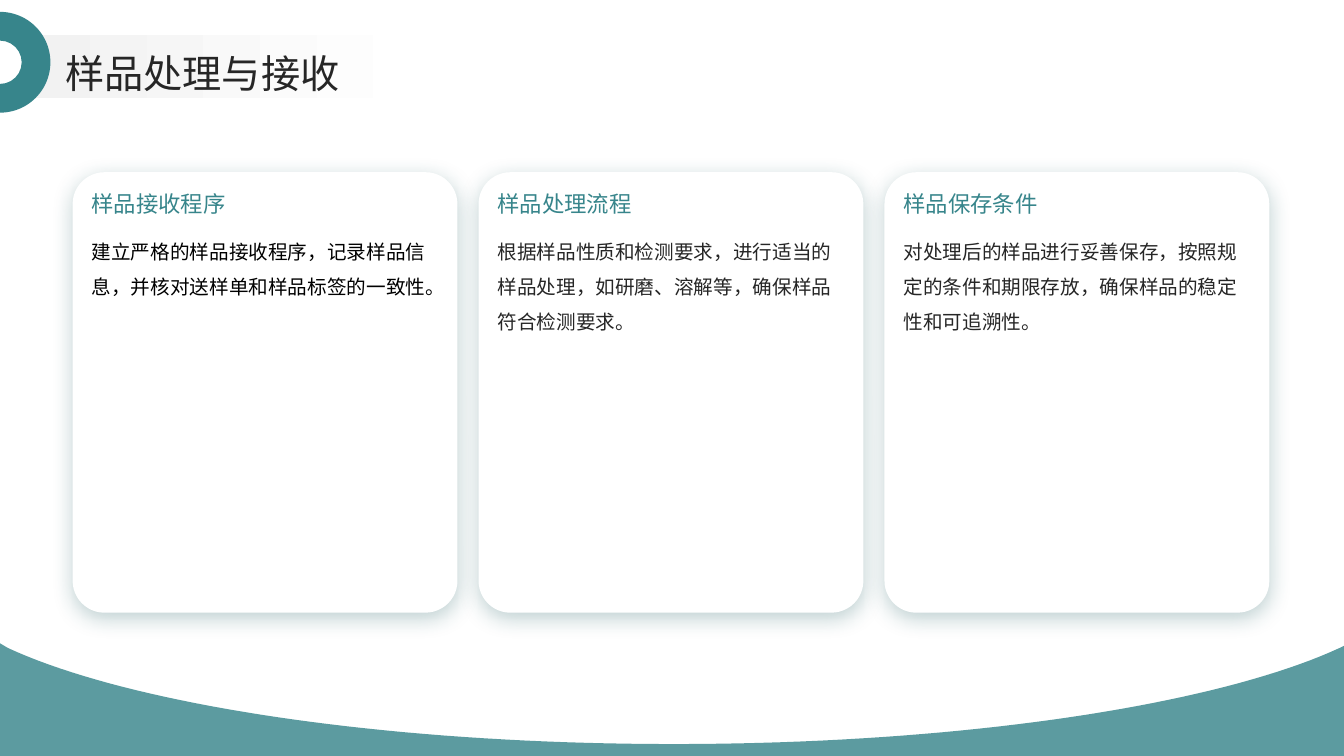
"""Build the slide on sample handling and reception: a title and three cards."""
from lxml.etree import SubElement
from pptx import Presentation
from pptx.dml.color import RGBColor
from pptx.enum.shapes import MSO_SHAPE as Preset
from pptx.enum.text import MSO_ANCHOR as Anchor
from pptx.oxml.ns import qn
from pptx.util import Cm, Pt

TEAL = RGBColor(0x37, 0x85, 0x8B)
SHADOW = RGBColor(0x29, 0x64, 0x68)
INK = RGBColor(0x26, 0x26, 0x26)
BLACK = RGBColor(0, 0, 0)
WHITE = RGBColor(0xFF, 0xFF, 0xFF)
PALE = RGBColor(0xF2, 0xF2, 0xF2)
FONT = "Noto Sans CJK SC"

CARDS = [
    ("样品接收程序", "建立严格的样品接收程序，记录样品信息，并核对送样单和样品标签的一致性。", BLACK),
    ("样品处理流程", "根据样品性质和检测要求，进行适当的样品处理，如研磨、溶解等，确保样品符合检测要求。", INK),
    ("样品保存条件", "对处理后的样品进行妥善保存，按照规定的条件和期限存放，确保样品的稳定性和可追溯性。", INK),
]
CARD_LEFT, CARD_TOP, CARD_WIDTH, CARD_HEIGHT = 1.83, 4.34, 9.7, 11.1
CARD_PITCH = 10.23
PADDING = 0.48
CURVE_STEPS = 40

presentation = Presentation()
presentation.slide_width, presentation.slide_height = Cm(33.87), Cm(19.05)
slide = presentation.slides.add_slide(presentation.slide_layouts[6])
shapes = slide.shapes


def add_text(text, left, top, width, height, size, color, spacing=1.0, anchor=Anchor.TOP):
    """Add a text box without insets."""
    frame = shapes.add_textbox(Cm(left), Cm(top), Cm(width), Cm(height)).text_frame
    frame.word_wrap = True
    frame.vertical_anchor = anchor
    frame.margin_left = frame.margin_right = frame.margin_top = frame.margin_bottom = 0
    paragraph = frame.paragraphs[0]
    paragraph.line_spacing = spacing
    run = paragraph.add_run()
    run.text = text
    run.font.size = Pt(size)
    run.font.name = FONT
    run.font.color.rgb = color
    SubElement(run.font._element, qn("a:ea"), typeface=FONT)


def add_plain_shape(preset, left, top, width, height, color):
    """Add a preset shape with a solid fill, no line and no shadow."""
    shape = shapes.add_shape(preset, Cm(left), Cm(top), Cm(width), Cm(height))
    shape.shadow.inherit = False
    shape.line.fill.background()
    shape.fill.solid()
    shape.fill.fore_color.rgb = color
    return shape


curves = [
    ((0.2, 16.33), (3.28, 17.75), (9.63, 18.75), (16.98, 18.75)),
    ((16.98, 18.75), (24.33, 18.75), (30.68, 17.75), (33.76, 16.33)),
]
wave_points = []
for curve in curves:
    for step in range(CURVE_STEPS + 1):
        t = step / CURVE_STEPS
        weights = ((1 - t) ** 3, 3 * t * (1 - t) ** 2, 3 * t * t * (1 - t), t ** 3)
        x, y = (sum(w * point[axis] for w, point in zip(weights, curve)) for axis in (0, 1))
        wave_points.append((Cm(x), Cm(y)))
wave_points += [(Cm(x), Cm(y)) for x, y in ((33.96, 16.23), (33.96, 19.05), (-0.05, 19.05))]
builder = shapes.build_freeform(Cm(-0.05), Cm(16.18))
builder.add_line_segments(wave_points, close=True)
wave = builder.convert_to_shape()
wave.shadow.inherit = False
wave.line.fill.background()
wave.fill.solid()
wave.fill.fore_color.rgb = TEAL
wave_color = wave._element.spPr.find(qn("a:solidFill")).find(qn("a:srgbClr"))
SubElement(wave_color, qn("a:alpha"), val="81000")

for index, (heading, body, body_color) in enumerate(CARDS):
    left = CARD_LEFT + index * CARD_PITCH
    card = add_plain_shape(Preset.ROUNDED_RECTANGLE, left, CARD_TOP, CARD_WIDTH, CARD_HEIGHT, WHITE)
    card.adjustments[0] = 0.083
    effects = card._element.spPr.find(qn("a:effectLst"))
    shadow = SubElement(effects, qn("a:outerShdw"), blurRad=str(Pt(15)), dist=str(Pt(4)),
                        dir="5400000", algn="t", rotWithShape="0")
    shadow_color = SubElement(shadow, qn("a:srgbClr"), val=str(SHADOW))
    SubElement(shadow_color, qn("a:alpha"), val="30000")
    text_left, text_width = left + PADDING, CARD_WIDTH - 2 * PADDING
    add_text(heading, text_left, 4.8, text_width, 0.91, 16, TEAL)
    add_text(body, text_left, 5.74, text_width, 9.27, 14, body_color, spacing=1.5)

title_band = add_plain_shape(Preset.RECTANGLE, 0.84, 0.89, 12.5, 1.57, PALE)
title_band.fill.gradient()
title_band.fill.gradient_angle = 0
for stop, color, position in zip(title_band.fill.gradient_stops, (PALE, WHITE), (0, 0.8)):
    stop.color.rgb = color
    stop.position = position
add_text("样品处理与接收", 1.65, 1.12, 30.18, 1.3, 28, INK, spacing=1.1, anchor=Anchor.MIDDLE)

ring = add_plain_shape(Preset.BLOCK_ARC, -1.27, 0.3, 2.54, 2.54, TEAL)
ring.rotation = 90
for index, value in enumerate((108, 0, 0.285)):
    ring.adjustments[index] = value

presentation.save("out.pptx")
